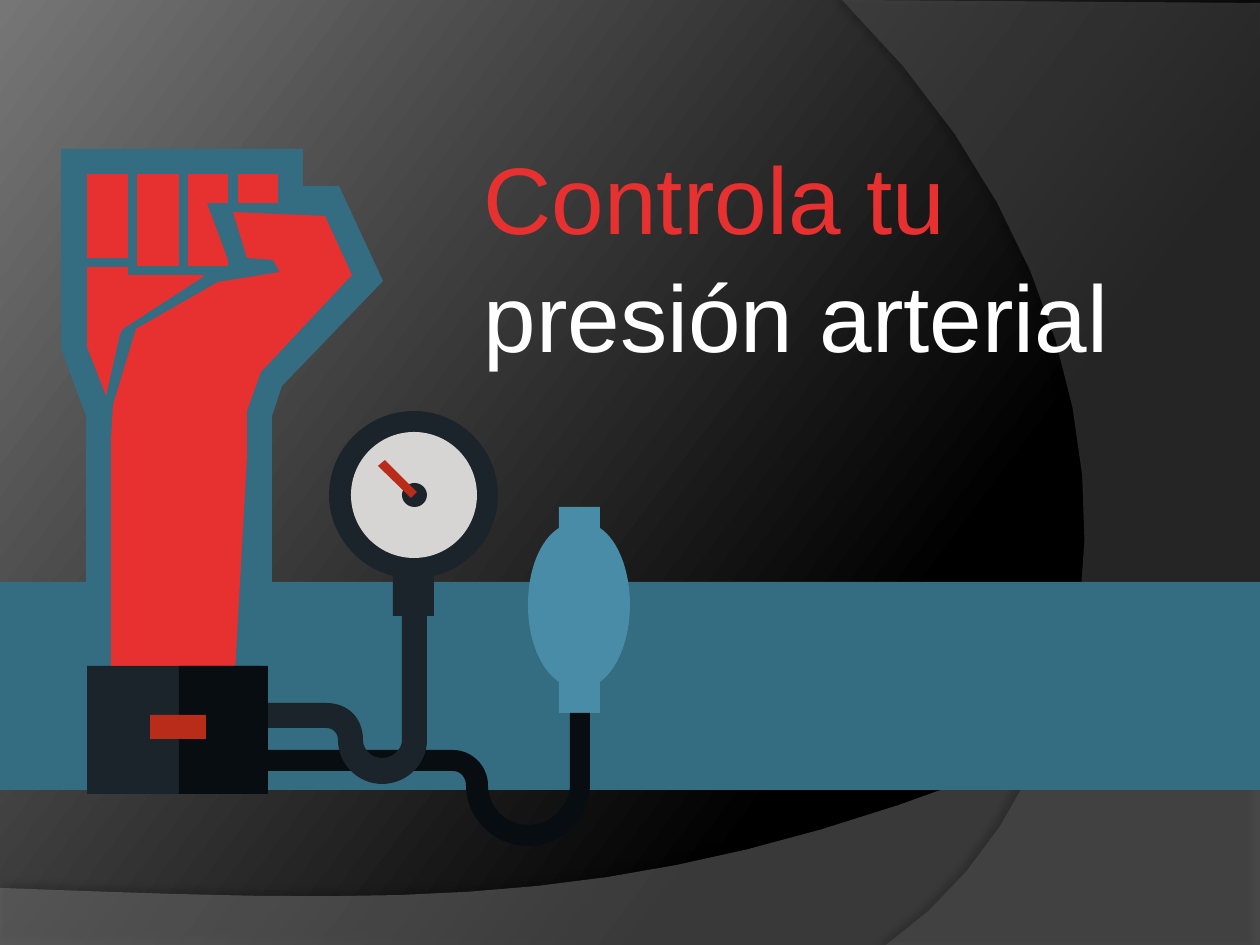
from lxml import etree
from pptx import Presentation
from pptx import util as u
from pptx.dml.color import RGBColor
from pptx.enum import shapes, text
from pptx.oxml.ns import qn

PX = 914400 / 126
WIDTH, HEIGHT = 1260, 945
FONT = "Arial"

BLACK = RGBColor(0x00, 0x00, 0x00)
WHITE = RGBColor(0xFF, 0xFF, 0xFF)
GREY = RGBColor(0x76, 0x76, 0x76)
FLOOR_GREY = RGBColor(0x7F, 0x7F, 0x7F)
SIDE_GREY = RGBColor(0x5E, 0x5E, 0x5E)
TEAL = RGBColor(0x34, 0x6C, 0x81)
BULB_BLUE = RGBColor(0x48, 0x8C, 0xA7)
RED = RGBColor(0xE6, 0x31, 0x30)
DARK_RED = RGBColor(0xB9, 0x2C, 0x1A)
SLATE = RGBColor(0x1B, 0x24, 0x2B)
INK = RGBColor(0x08, 0x0D, 0x11)
DIAL = RGBColor(0xD7, 0xD5, 0xD4)

RECT = shapes.MSO_SHAPE.RECTANGLE
OVAL = shapes.MSO_SHAPE.OVAL

TITLE = [("Controla tu", RED), ("presión arterial", WHITE)]
TITLE_BOX = (471, 136, 777, 242)
BAND = (0, 582, WIDTH, 208)

# In an outline, two numbers are a corner and six are a cubic curve.
# Waves: outline, colour, opacity %, shadow (opacity %, blur pt, distance pt, angle)
WAVES = [
    ([(0, 888), (0, 945), (1260, 945), (1260, 655), (704, 919, 493, 906, 0, 888)],
     FLOOR_GREY, 45, (35, 4, 3.5, 270)),
    ([(1260, 3), (1260, 945), (886, 945), (1123, 780, 1193, 347, 842, 0)],
     SIDE_GREY, 40, (45, 4, 4, 180)),
]

FIST = [(86, 752), (272, 752), (272, 416), (282, 386), (383, 281), (339, 186),
        (303, 186), (303, 149), (61, 149), (61, 347), (63, 354), (86, 416)]
PALM = [(87, 267), (128, 267), (128, 275), (204, 275), (203, 277), (123, 329),
        (120, 334), (106, 396), (87, 347)]
FINGERS = [
    [(87, 174), (128, 174), (128, 258), (87, 258)],
    [(137, 174), (179, 174), (179, 266), (137, 266)],
    [(188, 174), (228, 174), (228, 203), (207, 203), (228, 260), (228, 266),
     (188, 266)],
    [(238, 174), (278, 174), (278, 203), (238, 203)],
]
ARM = [(233, 212), (325, 216), (352, 275), (261, 372), (247, 411), (247, 457),
       (232, 727), (111, 727), (111, 440), (113, 405), (136, 329), (218, 282),
       (280, 272), (273, 260), (247, 258)]
BULB = [(600, 528), (600, 507), (559, 507), (559, 528),
        (540, 540, 528, 570, 528, 605), (528, 639, 540, 669, 559, 682),
        (559, 713), (600, 713), (600, 682),
        (618, 669, 630, 639, 630, 605), (630, 570, 618, 540, 600, 528)]
BULB_TUBE = [(570, 785), (570, 806, 551, 825, 528, 825),
             (505, 825, 488, 806, 488, 785), (488, 766, 472, 750, 453, 750),
             (262, 750), (262, 771), (453, 771),
             (460, 771, 466, 777, 466, 785), (466, 818, 494, 846, 528, 846),
             (562, 846, 590, 818, 590, 785), (590, 713), (570, 713)]
GAUGE = [(498, 495), (498, 449, 460, 411, 414, 411),
         (367, 411, 329, 449, 329, 495), (329, 534, 357, 567, 393, 576),
         (393, 616), (402, 616), (402, 740),
         (402, 750, 392, 758, 382, 758), (372, 758, 363, 750, 363, 740),
         (363, 718, 348, 703, 326, 703), (252, 703), (252, 728), (326, 728),
         (333, 728, 338, 733, 338, 740), (338, 764, 358, 784, 382, 784),
         (407, 784, 427, 764, 427, 740), (427, 616), (434, 616), (434, 576),
         (471, 567, 498, 534, 498, 495)]
NEEDLE = [(411, 498), (378, 466), (385, 460), (417, 492)]

# Back to front: an outline, or a preset with its box
DRAWING = [
    (FIST, TEAL), (PALM, RED), *[(finger, RED) for finger in FINGERS], (ARM, RED),
    (BULB, BULB_BLUE), (BULB_TUBE, INK), (GAUGE, SLATE),
    ((OVAL, 351, 432, 126, 126), DIAL),
    ((OVAL, 402, 483, 25, 24), SLATE),
    ((RECT, 87, 666, 173, 128), SLATE),
    ((RECT, 179, 666, 89, 128), INK),
    (NEEDLE, DARK_RED),
    ((RECT, 150, 715, 56, 24), DARK_RED),
]


def px(*values):
    return [u.Emu(round(v * PX)) for v in values]


def flatten(outline, steps=16):
    """Turn corners and cubic curves into a list of EMU points."""
    points = []
    for part in outline:
        if len(part) == 2:
            points.append(part)
            continue
        knots = [points[-1], part[:2], part[2:4], part[4:]]
        for i in range(1, steps + 1):
            t = i / steps
            weights = ((1 - t) ** 3, 3 * t * (1 - t) ** 2, 3 * t * t * (1 - t), t ** 3)
            points.append(tuple(sum(w * k[axis] for w, k in zip(weights, knots))
                                for axis in (0, 1)))
    return [tuple(px(*point)) for point in points]


def paint(sp, color):
    sp.fill.solid()
    sp.fill.fore_color.rgb = color
    sp.line.fill.background()
    sp.shadow.inherit = False
    return sp


def add_outline(parent, outline, color):
    start, *rest = flatten(outline)
    builder = parent.build_freeform(*start)
    builder.add_line_segments(rest, close=True)
    return paint(builder.convert_to_shape(), color)


def add_preset(parent, kind, box, color):
    return paint(parent.add_shape(kind, *px(*box)), color)


def add_alpha(color_element, percent):
    etree.SubElement(color_element, qn("a:alpha"), val=str(percent * 1000))


def add_shadow(sp, opacity, blur, distance, angle):
    effects = sp._element.spPr.find(qn("a:effectLst"))
    outer = etree.SubElement(effects, qn("a:outerShdw"), blurRad=str(u.Pt(blur)),
                             dist=str(u.Pt(distance)), dir=str(angle * 60000),
                             algn="ctr", rotWithShape="0")
    add_alpha(etree.SubElement(outer, qn("a:srgbClr"), val=str(BLACK)), opacity)


def write(p, words, size=54, color=WHITE, font=FONT):
    r = p.add_run()
    r.text = words
    r.font.size, r.font.name = u.Pt(size), font
    r.font.color.rgb = color
    p.alignment = text.PP_ALIGN.LEFT


def add_title(slide):
    sp = slide.shapes.title
    sp.left, sp.top, sp.width, sp.height = px(*TITLE_BOX)
    tf = sp.text_frame
    tf.word_wrap = True
    tf.auto_size = text.MSO_AUTO_SIZE.NONE
    tf.vertical_anchor = text.MSO_ANCHOR.BOTTOM
    for i, (words, color) in enumerate(TITLE):
        p = tf.add_paragraph() if i else tf.paragraphs[0]
        p.space_before = u.Pt(3 if i else 0)
        write(p, words, color=color)
    slide.shapes._spTree.append(sp._element)  # in front of the waves


def main():
    prs = Presentation()
    prs.slide_width, prs.slide_height = px(WIDTH, HEIGHT)
    slide = prs.slides.add_slide(prs.slide_layouts[5])

    fill = slide.background.fill
    fill.gradient()
    fill.gradient_angle = 143
    for stop, position, color in zip(fill.gradient_stops, (0.3, 1), (BLACK, GREY)):
        stop.position, stop.color.rgb = position, color

    for outline, color, opacity, shadow in WAVES:
        sp = add_outline(slide.shapes, outline, color)
        add_alpha(sp._element.spPr.find(qn("a:solidFill"))[0], opacity)
        add_shadow(sp, *shadow)
    add_preset(slide.shapes, RECT, BAND, TEAL)
    add_title(slide)

    drawing = slide.shapes.add_group_shape().shapes
    for form, color in DRAWING:
        if isinstance(form, list):
            add_outline(drawing, form, color)
        else:
            add_preset(drawing, form[0], form[1:], color)
    prs.save("out.pptx")


if __name__ == "__main__":
    main()
